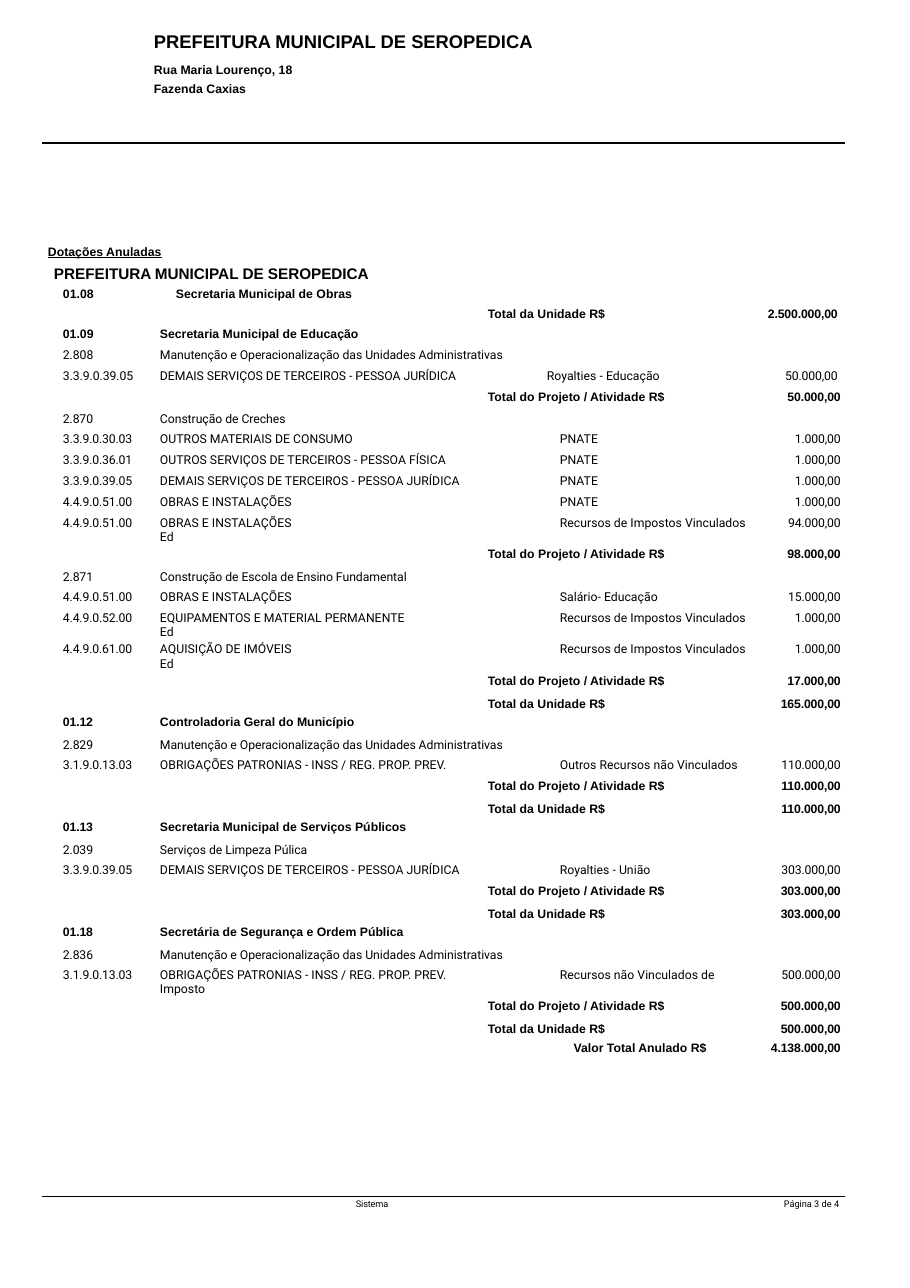
from lxml import etree
from pptx import Presentation
from pptx import util as u
from pptx.dml.color import RGBColor
from pptx.enum import shapes, text
from pptx.oxml.ns import qn

PX = 8298
BLACK = RGBColor(0, 0, 0)
RIGHT = text.PP_ALIGN.RIGHT
TAB = 400
CITY = "PREFEITURA MUNICIPAL DE SEROPEDICA"
PROJECT_TOTAL = "Total do Projeto / Atividade R$"
UNIT_TOTAL = "Total da Unidade R$"
UPKEEP = "Manutenção e Operacionalização das Unidades Administrativas"
SERVICES = "DEMAIS SERVIÇOS DE TERCEIROS - PESSOA JURÍDICA"
WORKS = "OBRAS E INSTALAÇÕES"
PAYROLL = "OBRIGAÇÕES PATRONIAS - INSS / REG. PROP. PREV."
TAXES = "Recursos de Impostos Vinculados Ed"

HEIGHTS = {"first": 19, "project": 21, "item": 21, "wide": 31,
           "total": 22, "unit": 41, "last_unit": 20, "grand": 17}
TOPS = {"first": 0, "project": 3, "unit": 3, "last_unit": 3}

ROWS = [
    ("first", "", PROJECT_TOTAL, "50.000,00"),
    ("project", "2.870", "Construção de Creches", ""),
    ("item", "3.3.9.0.30.03", "OUTROS MATERIAIS DE CONSUMO\tPNATE", "1.000,00"),
    ("item", "3.3.9.0.36.01",
     "OUTROS SERVIÇOS DE TERCEIROS - PESSOA FÍSICA\tPNATE", "1.000,00"),
    ("item", "3.3.9.0.39.05", f"{SERVICES}\tPNATE", "1.000,00"),
    ("item", "4.4.9.0.51.00", f"{WORKS}\tPNATE", "1.000,00"),
    ("wide", "4.4.9.0.51.00", f"{WORKS}\t{TAXES}", "94.000,00"),
    ("total", "", PROJECT_TOTAL, "98.000,00"),
    ("project", "2.871", "Construção de Escola de Ensino Fundamental", ""),
    ("item", "4.4.9.0.51.00", f"{WORKS}\tSalário- Educação", "15.000,00"),
    ("wide", "4.4.9.0.52.00",
     f"EQUIPAMENTOS E MATERIAL PERMANENTE\t{TAXES}", "1.000,00"),
    ("wide", "4.4.9.0.61.00", f"AQUISIÇÃO DE IMÓVEIS\t{TAXES}", "1.000,00"),
    ("total", "", PROJECT_TOTAL, "17.000,00"),
    ("unit", "01.12", "Controladoria Geral do Município", "165.000,00"),
    ("project", "2.829", UPKEEP, ""),
    ("item", "3.1.9.0.13.03",
     f"{PAYROLL}\tOutros Recursos não Vinculados", "110.000,00"),
    ("total", "", PROJECT_TOTAL, "110.000,00"),
    ("unit", "01.13", "Secretaria Municipal de Serviços Públicos", "110.000,00"),
    ("project", "2.039", "Serviços de Limpeza Púlica", ""),
    ("item", "3.3.9.0.39.05", f"{SERVICES}\tRoyalties - União", "303.000,00"),
    ("total", "", PROJECT_TOTAL, "303.000,00"),
    ("unit", "01.18", "Secretária de Segurança e Ordem Pública", "303.000,00"),
    ("project", "2.836", UPKEEP, ""),
    ("wide", "3.1.9.0.13.03",
     f"{PAYROLL}\tRecursos não Vinculados de Imposto", "500.000,00"),
    ("total", "", PROJECT_TOTAL, "500.000,00"),
    ("last_unit", "", UNIT_TOTAL, "500.000,00"),
    ("grand", "", "Valor Total Anulado R$", "4.138.000,00"),
]


def px(n):
    return u.Emu(n * PX)


def write(p, words, size=8, bold=False, underline=False, align=None,
          indent=0, tab=None, before=0, spacing=None, kern=0):
    pPr = p._p.get_or_add_pPr()
    if indent:
        pPr.set("marL", str(px(indent)))
    if align is not None:
        p.alignment = align
    if before:
        p.space_before = u.Pt(before)
    if spacing:
        p.line_spacing = spacing
    if tab:
        tabs = etree.SubElement(pPr, qn("a:tabLst"))
        etree.SubElement(tabs, qn("a:tab"), pos=str(px(tab)), algn="l")
    if not words:
        etree.SubElement(p._p, qn("a:endParaRPr"), sz=str(size * 100))
        return
    r = p.add_run()
    r.text = words
    r.font.size = u.Pt(size)
    r.font.name = "Arial" if bold else "Roboto"
    r.font.bold = bold
    r.font.underline = underline
    r.font.color.rgb = BLACK
    if kern:
        r._r.get_or_add_rPr().set("spc", str(kern))


def fill_frame(tf, lines):
    for i, (words, style) in enumerate(lines):
        p = tf.add_paragraph() if i else tf.paragraphs[0]
        write(p, words, **style)


class Page:
    def __init__(self, prs):
        self.s = prs.slides.add_slide(prs.slide_layouts[6])

    def rule(self, y):
        sp = self.s.shapes.add_connector(
            shapes.MSO_CONNECTOR.STRAIGHT, px(42), px(y), px(845), px(y))
        sp.line.color.rgb = BLACK
        sp.line.width = u.Pt(0.75)
        etree.SubElement(sp._element.spPr, qn("a:effectLst"))

    def box(self, x, y, w, h, *lines):
        tf = self.s.shapes.add_textbox(px(x), px(y), px(w), px(h)).text_frame
        tf.word_wrap = True
        tf.margin_left = tf.margin_top = tf.margin_right = tf.margin_bottom = 0
        fill_frame(tf, lines)

    def cell(self, cell, lines, top, right=0):
        cell.fill.background()
        cell.margin_left = cell.margin_bottom = 0
        cell.margin_top, cell.margin_right = px(top), px(right)
        fill_frame(cell.text_frame, lines)

    def table(self, x, y, widths, rows):
        heights = [HEIGHTS[row[0]] for row in rows]
        tbl = self.s.shapes.add_table(
            len(rows), len(widths), px(x), px(y), px(sum(widths)), px(sum(heights))).table
        tbl.first_row = tbl.horz_banding = False
        for col, w in zip(tbl.columns, widths):
            col.width = px(w)
        for i, (kind, code, label, amount) in enumerate(rows):
            tbl.rows[i].height = px(heights[i])
            top = TOPS.get(kind, 2)
            bold = kind not in ("project", "item", "wide")
            right = 0
            if kind == "unit":
                lines = [(UNIT_TOTAL, dict(bold=True, indent=340)),
                         (label, dict(bold=True, indent=12, before=3.1))]
            elif kind == "grand":
                lines = [(label, dict(bold=True, align=RIGHT))]
                right = 53
            elif bold:
                lines = [(label, dict(bold=True, indent=340))]
            elif kind == "project":
                lines = [(label, dict(indent=12, kern=-7))]
            else:
                lines = [(label, dict(indent=12, tab=TAB))]
            code_top = 21 if kind == "unit" else top
            self.cell(tbl.cell(i, 0),
                      [(code, dict(bold=bold, indent=3, kern=-10))], code_top)
            self.cell(tbl.cell(i, 1), lines, top, right)
            self.cell(tbl.cell(i, 2),
                      [(amount, dict(bold=bold, align=RIGHT, kern=-10))], top, 3)


def main():
    prs = Presentation()
    prs.slide_width, prs.slide_height = u.Inches(8.26), u.Inches(11.69)
    page = Page(prs)
    strong = dict(bold=True)

    page.rule(143)
    page.box(154, 30, 385, 67,
             (CITY, dict(size=12, bold=True)),
             ("Rua Maria Lourenço, 18", dict(bold=True, before=4.5, spacing=1.25)),
             ("Fazenda Caxias", dict(bold=True, spacing=1.25)))
    page.box(47, 244, 327, 57,
             ("Dotações Anuladas", dict(bold=True, underline=True, indent=1)),
             (CITY, dict(size=10, bold=True, indent=7, before=3.8)),
             ("01.08\tSecretaria Municipal de Obras",
              dict(bold=True, indent=16, tab=113, before=2.2)))
    page.box(488, 306, 125, 15, (UNIT_TOTAL, strong))
    page.box(758, 306, 80, 15,
             ("2.500.000,00", dict(bold=True, align=RIGHT, kern=-10)))

    columns = [(63, 80, ("01.09", "2.808", "3.3.9.0.39.05")),
               (160, 360, ("Secretaria Municipal de Educação", UPKEEP, SERVICES))]
    for x, w, (unit, project, item) in columns:
        page.box(x, 326, w, 57, (unit, strong),
                 (project, dict(before=4.7, kern=-7)),
                 (item, dict(before=3.9, kern=-5)))
    page.box(547, 368, 125, 15, ("Royalties - Educação", {}))
    page.box(758, 368, 80, 15, ("50.000,00", dict(align=RIGHT, kern=-10)))

    page.table(60, 390, (88, 612, 84), ROWS)

    page.rule(1197)
    page.box(356, 1199, 45, 11, ("Sistema", dict(size=6, kern=-10)))
    page.box(784, 1199, 65, 11, ("Página 3 de 4", dict(size=6)))
    prs.save("out.pptx")


if __name__ == "__main__":
    main()
